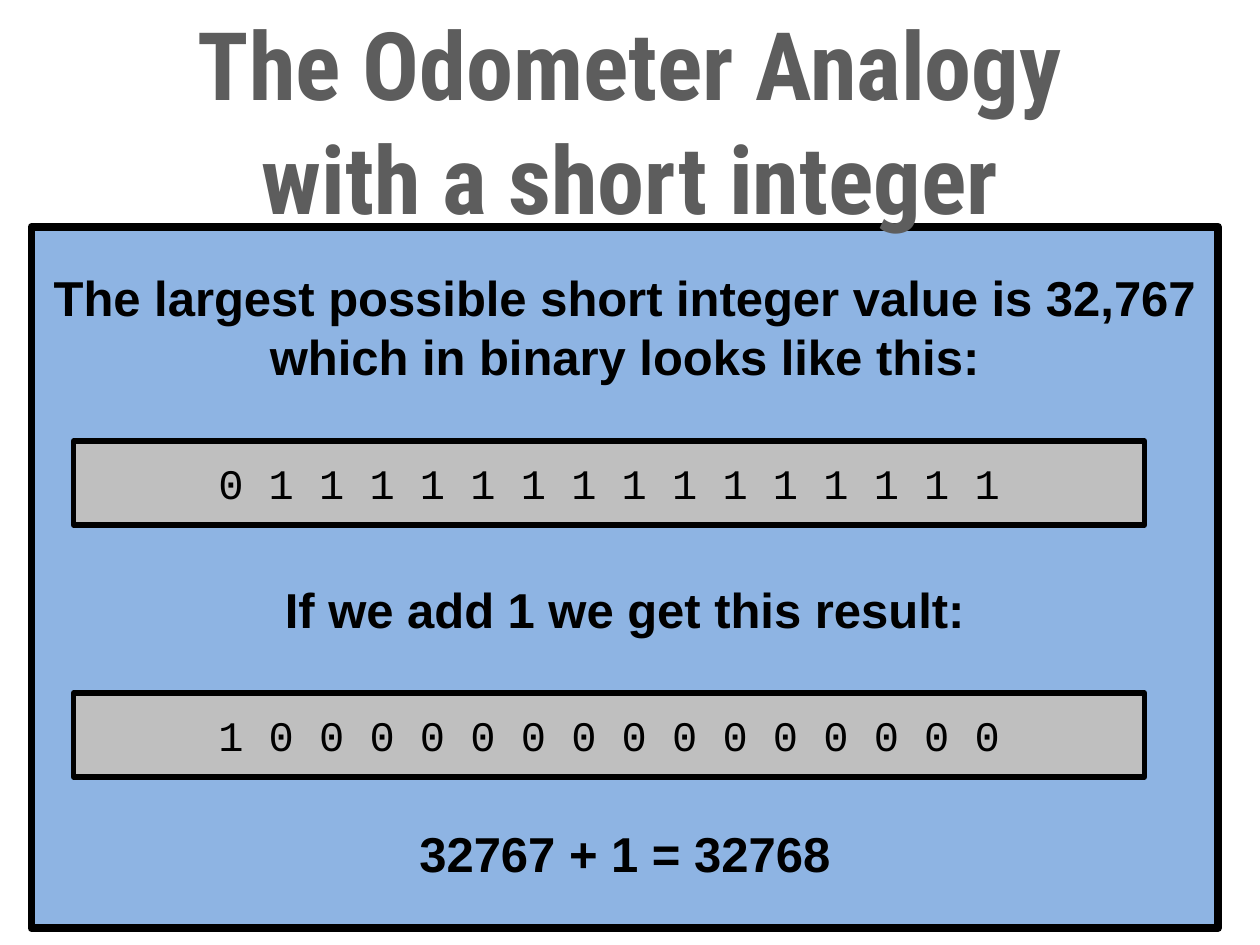
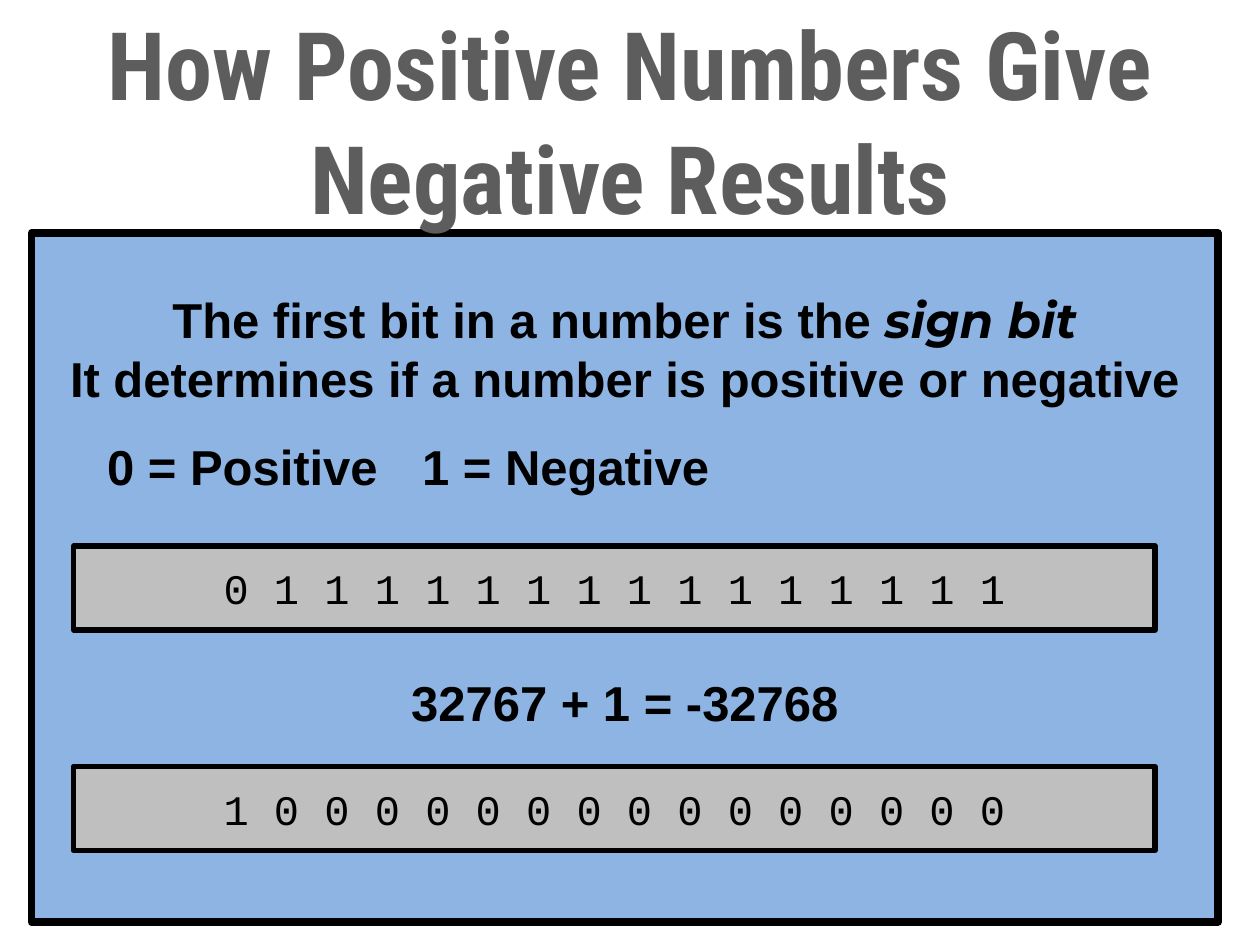
from dataclasses import dataclass

from lxml.etree import SubElement
from pptx import Presentation
from pptx.dml.color import RGBColor
from pptx.enum.shapes import MSO_SHAPE
from pptx.enum.text import MSO_ANCHOR, MSO_AUTO_SIZE, PP_ALIGN
from pptx.oxml.ns import qn
from pptx.util import Emu, Inches, Pt

# Shared look
TITLE_COLOR, INK, PANEL, STRIP, PAPER = "5D5D5D", "000000", "8EB4E3", "BFBFBF", "FFFFFF"
TITLE_FONT, BODY_FONT, ACCENT_FONT, BIT_FONT = (
    "Roboto Condensed", "Arial", "Montserrat", "Courier New")
LINE_PITCH = 33.7

# Grid of 120 columns by 90 rows
WIDTH, HEIGHT = Inches(10), Inches(7.5)
COLS, ROWS = 120, 90
TITLE_ROWS, PANEL_LEFT, PANEL_COLS = 23, 3, 113
STRIP_LEFT, STRIP_ROWS = 7, 8

MAX_SHORT = " ".join("0" + "1" * 15)
OVERFLOW = " ".join("1" + "0" * 15)


@dataclass
class Line:
    text: str
    before: float = 0          # points
    accent: str = ""           # closing words in the accent font
    tabs: tuple[float, ...] = ()  # inches


@dataclass
class BitStrip:
    bits: str
    row: float


@dataclass
class Page:
    title: str
    top: float                 # panel's first row
    rows: float
    inset: float               # inches above the first line
    lines: list[Line]
    strip_cols: float
    strips: list[BitStrip]


PAGES = [
    Page("The Odometer Analogy\nwith a short integer", 21.6, 66.8, 0.32, [
        Line("The largest possible short integer value is 32,767 "
             "which in binary looks like this:"),
        Line("If we add 1 we get this result:", before=111),
        Line("32767 + 1 = 32768", before=105.7),
    ], 102, [BitStrip(MAX_SHORT, 42), BitStrip(OVERFLOW, 66)]),
    Page("How Positive Numbers Give Negative Results", 22.2, 65.6, 0.45, [
        Line("The first bit in a number is the ", accent="sign bit"),
        Line("It determines if a number is positive or negative"),
        Line("0 = Positive\t1 = Negative", before=16.6, tabs=(2.11, 4.79)),
        Line("32767 + 1 = -32768", before=100.6),
    ], 103, [BitStrip(MAX_SHORT, 52), BitStrip(OVERFLOW, 73)]),
]


def rgb(color: str) -> RGBColor:
    return RGBColor.from_string(color)


def place(sp, col: float, row: float, cols: float, rows: float) -> None:
    sp.left, sp.width = (Emu(round(WIDTH * n / COLS)) for n in (col, cols))
    sp.top, sp.height = (Emu(round(HEIGHT * n / ROWS)) for n in (row, rows))


def paint(sp, fill: str, line_width: float) -> None:
    sp.fill.solid()
    sp.fill.fore_color.rgb = rgb(fill)
    sp.line.color.rgb = rgb(INK)
    sp.line.width = Pt(line_width)


def add_text(p, text: str, *, size: float, font: str, color: str = INK,
             bold: bool = False, italic: bool = False) -> None:
    for i, part in enumerate(text.split("\n")):
        if i:
            p.add_line_break()
        r = p.add_run()
        r.text = part
        r.font.size, r.font.name = Pt(size), font
        r.font.bold, r.font.italic = bold, italic
        r.font.color.rgb = rgb(color)


def setup_frame(sp, anchor: MSO_ANCHOR, wrap: bool = True):
    tf = sp.text_frame
    tf.auto_size = MSO_AUTO_SIZE.NONE
    tf.vertical_anchor, tf.word_wrap = anchor, wrap
    return tf


def add_title(slide, text: str) -> None:
    sp = slide.shapes.title
    place(sp, 0, 0, COLS, TITLE_ROWS)
    p = setup_frame(sp, MSO_ANCHOR.TOP).paragraphs[0]
    p.alignment = PP_ALIGN.CENTER
    add_text(p, text, size=54, font=TITLE_FONT, color=TITLE_COLOR, bold=True)
    slide.shapes._spTree.append(sp._element)  # in front of the panel


def format_line(p, line: Line) -> None:
    pPr = p._p.get_or_add_pPr()
    pPr.set("marL", "0")
    pPr.set("indent", "0")
    SubElement(pPr, qn("a:buNone"))
    if line.tabs:
        stops = SubElement(pPr, qn("a:tabLst"))
        for pos in line.tabs:
            SubElement(stops, qn("a:tab"), pos=str(Inches(pos)), algn="l")
    p.alignment = PP_ALIGN.LEFT if line.tabs else PP_ALIGN.CENTER
    p.line_spacing, p.space_before = Pt(LINE_PITCH), Pt(line.before)


def add_panel(slide, page: Page) -> None:
    sp = slide.placeholders[1]
    place(sp, PANEL_LEFT, page.top, PANEL_COLS, page.rows)
    paint(sp, PANEL, 4.5)
    tf = setup_frame(sp, MSO_ANCHOR.TOP)
    tf.margin_top = Inches(page.inset)
    for i, line in enumerate(page.lines):
        p = tf.add_paragraph() if i else tf.paragraphs[0]
        format_line(p, line)
        text = "\t" + line.text if line.tabs else line.text
        add_text(p, text, size=28, font=BODY_FONT, bold=True)
        if line.accent:
            add_text(p, line.accent, size=28, font=ACCENT_FONT, bold=True, italic=True)


def add_strip(slide, strip: BitStrip, cols: float) -> None:
    sp = slide.shapes.add_shape(MSO_SHAPE.RECTANGLE, 0, 0, 0, 0)
    place(sp, STRIP_LEFT, strip.row, cols, STRIP_ROWS)
    sp.shadow.inherit = False
    paint(sp, STRIP, 3)
    p = setup_frame(sp, MSO_ANCHOR.MIDDLE, wrap=False).paragraphs[0]
    p.alignment = PP_ALIGN.CENTER
    add_text(p, strip.bits, size=24, font=BIT_FONT)


def main() -> None:
    prs = Presentation()
    prs.slide_width, prs.slide_height = WIDTH, HEIGHT
    background = prs.slide_master.background.fill
    background.solid()
    background.fore_color.rgb = rgb(PAPER)
    for page in PAGES:
        slide = prs.slides.add_slide(prs.slide_layouts[1])
        add_panel(slide, page)
        for strip in page.strips:
            add_strip(slide, strip, page.strip_cols)
        add_title(slide, page.title)
    prs.save("out.pptx")


if __name__ == "__main__":
    main()
